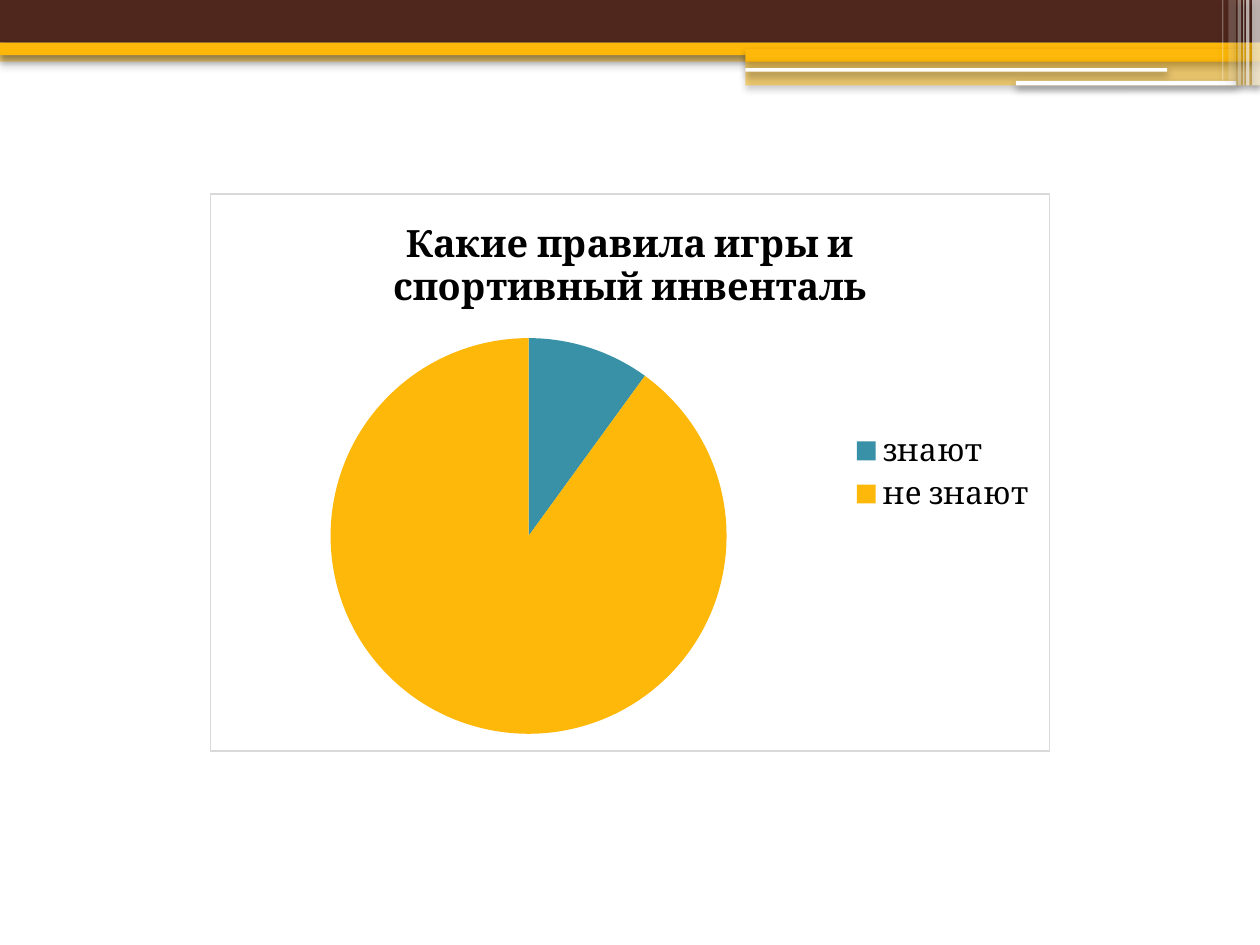
from lxml import etree
from pptx import Presentation
from pptx.chart.data import CategoryChartData
from pptx.dml.color import RGBColor
from pptx.enum import chart as ch, shapes as sh
from pptx.oxml import ns, parse_xml
from pptx.util import Pt

HUES = {"brown": "4F271C", "gold": "FEB80A", "teal": "3891A7",
        "white": "FFFFFF", "black": "000000", "grey": "D9D9D9"}
SHADE = (
    f'<a:effectLst {ns.nsdecls("a")}><a:outerShdw blurRad="{Pt(4.1)}" '
    f'dist="{Pt(2)}" dir="5400000" algn="ctr" rotWithShape="0">'
    f'<a:srgbClr val="{HUES["black"]}"><a:alpha val="40000"/></a:srgbClr>'
    '</a:outerShdw></a:effectLst>')


def hue(name):
    """Return the named colour."""
    return RGBColor.from_string(HUES[name])


def style(font, **vals):
    """Set font attributes from format values."""
    font.color.rgb = hue("black")
    for key, val in vals.items():
        setattr(font, key, val)


def bar(slide, box, tint, alpha=100, kind=sh.MSO_SHAPE.RECTANGLE):
    """Add one shaded bar with the given opacity in percent."""
    item = slide.shapes.add_shape(kind, *map(Pt, box))
    item.fill.solid()
    item.fill.fore_color.rgb = hue(tint)
    item.line.fill.background()
    props = item.element.spPr
    if alpha < 100:
        clr = props.find(ns.qn("a:solidFill"))[0]
        etree.SubElement(clr, ns.qn("a:alpha"), val=str(alpha * 1000))
    props.append(parse_xml(SHADE))


def header(slide, box):
    """Draw the top band, its right-hand step and the light stripes."""
    left, top, wide, high = box
    step = 426
    for x, y, h, tint, alpha in (
            (0, 28.8, 6.5, "gold", 50), (0, 0, 24.4, "brown", 100),
            (0, 24.4, 7.2, "gold", 100), (step, 28.1, 7.2, "gold", 100),
            (step, 34.6, 14.2, "gold", 50)):
        bar(slide, (left + x, top + y, wide - x, h), tint, alpha)
    for x, y, w, h in ((step, 38.9, 241, 2), (580.5, 46.2, 126, 2.6)):
        bar(slide, (left + x, top + y, w, h), "white",
            kind=sh.MSO_SHAPE.ROUNDED_RECTANGLE)
    for back, w, cut, alpha in (
            (4.5, 4.5, 0, 65), (8, 2, 0, 65), (9.6, 0.7, 0, 60),
            (12.8, 2, 0, 40), (18, 4.3, 2.7, 20), (21.6, 0.7, 2.7, 30)):
        bar(slide, (left + wide - back, top, w, high - cut), "white", alpha)


def survey(slide, box):
    """Place the survey pie with its title, legend and thin frame."""
    name = "Какие правила игры и спортивный инвенталь"
    data = CategoryChartData()
    data.categories = ["знают", "не знают"]
    data.add_series(name, (10, 90))
    pie = slide.shapes.add_chart(
        ch.XL_CHART_TYPE.PIE, *map(Pt, box), data).chart
    style(pie.font, name="Arial", size=Pt(10))
    pie.has_title = pie.has_legend = True
    frame = pie.chart_title.text_frame
    frame.text = name
    style(frame.paragraphs[0].runs[0].font,
          name="Cambria", size=Pt(21.6), bold=True)
    pie.chart_title.include_in_layout = False
    key = pie.legend
    key.position = ch.XL_LEGEND_POSITION.RIGHT
    key.include_in_layout = False
    style(key.font, name="Cambria", size=Pt(18))
    plot = pie.plots[0]
    plot.vary_by_categories = True
    for spot, tint in enumerate(("teal", "gold")):
        fill = plot.series[0].points[spot].format.fill
        fill.solid()
        fill.fore_color.rgb = hue(tint)
    pie.element.find(ns.qn("c:chart")).addnext(parse_xml(
        f'<c:spPr {ns.nsdecls("c", "a")}><a:noFill/><a:ln w="{Pt(0.75)}">'
        f'<a:solidFill><a:srgbClr val="{HUES["grey"]}"/></a:solidFill>'
        '</a:ln></c:spPr>'))


def main():
    """Build the slide and save it."""
    deck = Presentation()
    deck.slide_width, deck.slide_height = Pt(720), Pt(540)
    slide = deck.slides.add_slide(deck.slide_layouts[6])
    header(slide, (0, 0, 720, 48.8))
    survey(slide, (120, 110.4, 480, 319.2))
    deck.save("out.pptx")


if __name__ == "__main__":
    main()
